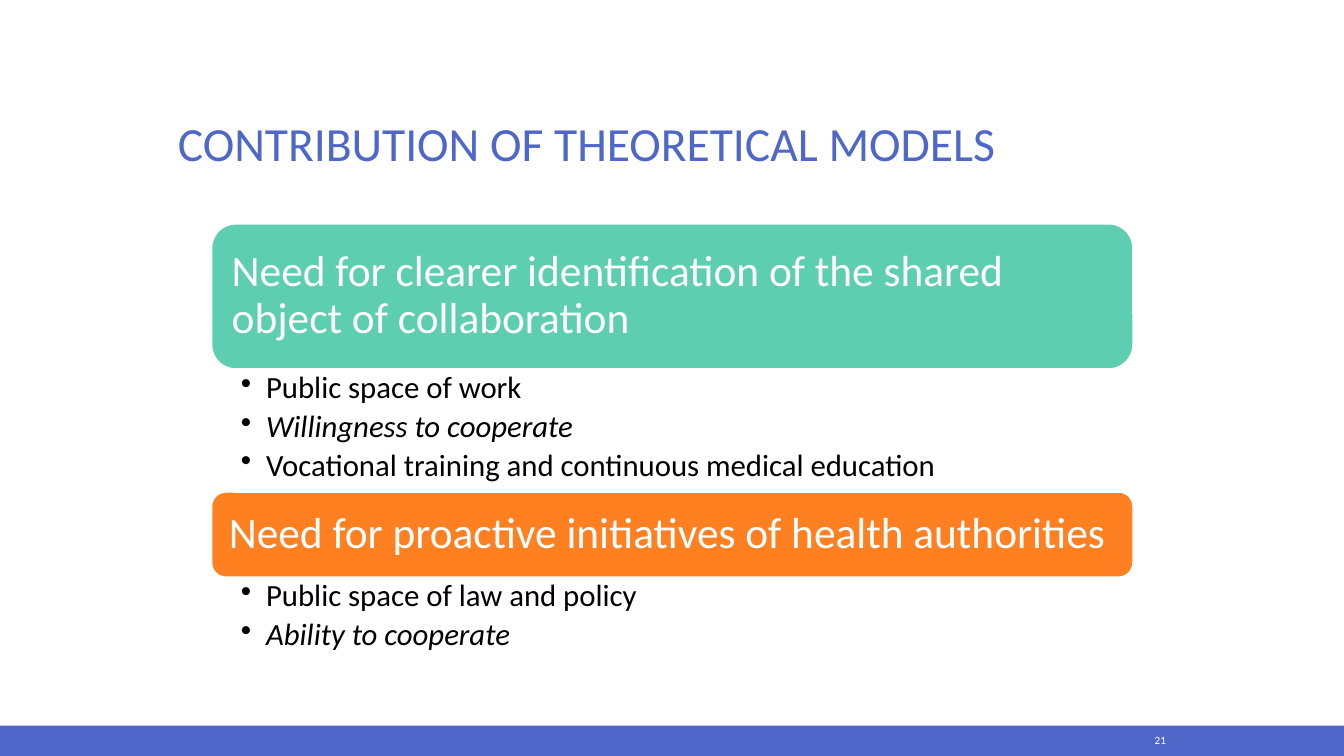
from dataclasses import dataclass

from lxml import etree
from pptx import Presentation
from pptx import util as u
from pptx.dml.color import RGBColor
from pptx.enum import shapes, text
from pptx.oxml import ns

BLUE = RGBColor(0x4E, 0x67, 0xC8)
GREEN = RGBColor(0x5D, 0xCE, 0xAF)
ORANGE = RGBColor(0xFF, 0x80, 0x21)
WHITE = RGBColor(0xFF, 0xFF, 0xFF)
BLACK = RGBColor(0, 0, 0)
FONT = "Calibri"

LIST_LEFT, LIST_TOP, LIST_WIDTH = 151.2, 159.9, 658.1
BULLET_INDENT = 18


@dataclass
class Bullet:
    text: str
    italic: bool = False


@dataclass
class Section:
    heading: str
    color: RGBColor
    heading_height: float
    bullets: list[Bullet]
    bullets_height: float


SECTIONS = [
    Section("Need for clearer identification of the shared object of collaboration",
            GREEN, 103.6,
            [Bullet("Public space of work"),
             Bullet("Willingness to cooperate", italic=True),
             Bullet("Vocational training and continuous medical education")],
            88),
    Section("Need for proactive initiatives of health authorities",
            ORANGE, 60.7,
            [Bullet("Public space of law and policy"),
             Bullet("Ability to cooperate", italic=True)],
            59),
]


def style(p, size: float, color: RGBColor, italic: bool = False,
          align=text.PP_ALIGN.LEFT, spacing: float = 0.9) -> None:
    p.alignment = align
    p.line_spacing = spacing
    for r in p.runs:
        r.font.name = FONT
        r.font.size = u.Pt(size)
        r.font.italic = italic
        r.font.color.rgb = color


def frame(sp, anchor, left: float = 7.2, top: float = 3.6,
          right: float = 7.2, bottom: float = 3.6):
    tf = sp.text_frame
    tf.word_wrap = True
    tf.vertical_anchor = anchor
    tf.margin_left, tf.margin_top = u.Pt(left), u.Pt(top)
    tf.margin_right, tf.margin_bottom = u.Pt(right), u.Pt(bottom)
    return tf


def add_box(s, kind, left: float, top: float, width: float, height: float,
            fill: RGBColor):
    sp = s.shapes.add_shape(kind, u.Pt(left), u.Pt(top), u.Pt(width), u.Pt(height))
    sp.shadow.inherit = False
    sp.fill.solid()
    sp.fill.fore_color.rgb = fill
    sp.line.fill.background()
    return sp


def add_label(s, words: str, left: float, top: float, width: float, height: float,
              size: float, color: RGBColor, anchor, align, spacing: float) -> None:
    sp = s.shapes.add_textbox(u.Pt(left), u.Pt(top), u.Pt(width), u.Pt(height))
    tf = frame(sp, anchor)
    tf.text = words
    style(tf.paragraphs[0], size, color, align=align, spacing=spacing)


def add_heading(s, section: Section, top: float) -> None:
    sp = add_box(s, shapes.MSO_SHAPE.ROUNDED_RECTANGLE, LIST_LEFT, top,
                 LIST_WIDTH, section.heading_height, section.color)
    sp.line.color.rgb = WHITE
    sp.line.width = u.Pt(1)
    tf = frame(sp, text.MSO_ANCHOR.MIDDLE, 9.3, 9.3, 9.3, 9.3)
    tf.text = section.heading
    style(tf.paragraphs[0], 31, WHITE)


def add_bullets(s, section: Section, top: float) -> None:
    sp = s.shapes.add_textbox(u.Pt(LIST_LEFT), u.Pt(top), u.Pt(LIST_WIDTH),
                              u.Pt(section.bullets_height))
    tf = frame(sp, text.MSO_ANCHOR.TOP, 20.9, 2.2, 12.2, 2.2)
    tf.text = "\n".join(b.text for b in section.bullets)
    for p, bullet in zip(tf.paragraphs, section.bullets):
        style(p, 22, BLACK, bullet.italic)
        p.space_after = u.Pt(4.1)
        pPr = p._p.get_or_add_pPr()
        pPr.set("lvl", "1")
        pPr.set("marL", str(u.Pt(BULLET_INDENT)))
        pPr.set("indent", str(u.Pt(-BULLET_INDENT)))
        etree.SubElement(pPr, ns.qn("a:buChar")).set("char", "•")


def main() -> None:
    prs = Presentation()
    prs.slide_width, prs.slide_height = u.Pt(960), u.Pt(540)
    s = prs.slides.add_slide(prs.slide_layouts[6])

    # Footer bar, title and slide number
    add_box(s, shapes.MSO_SHAPE.RECTANGLE, 0, 518.4, 960, 21.6, BLUE)
    add_label(s, "CONTRIBUTION OF THEORETICAL MODELS", 120, 36, 720, 90, 34, BLUE,
              text.MSO_ANCHOR.BOTTOM, text.PP_ALIGN.LEFT, 0.9)
    add_label(s, "21", 779, 519.8, 61, 18, 8, WHITE,
              text.MSO_ANCHOR.MIDDLE, text.PP_ALIGN.RIGHT, 1.0)

    # Headings with their bullets, stacked without gaps
    top = LIST_TOP
    for section in SECTIONS:
        add_heading(s, section, top)
        top += section.heading_height
        add_bullets(s, section, top)
        top += section.bullets_height

    prs.save("out.pptx")


if __name__ == "__main__":
    main()
